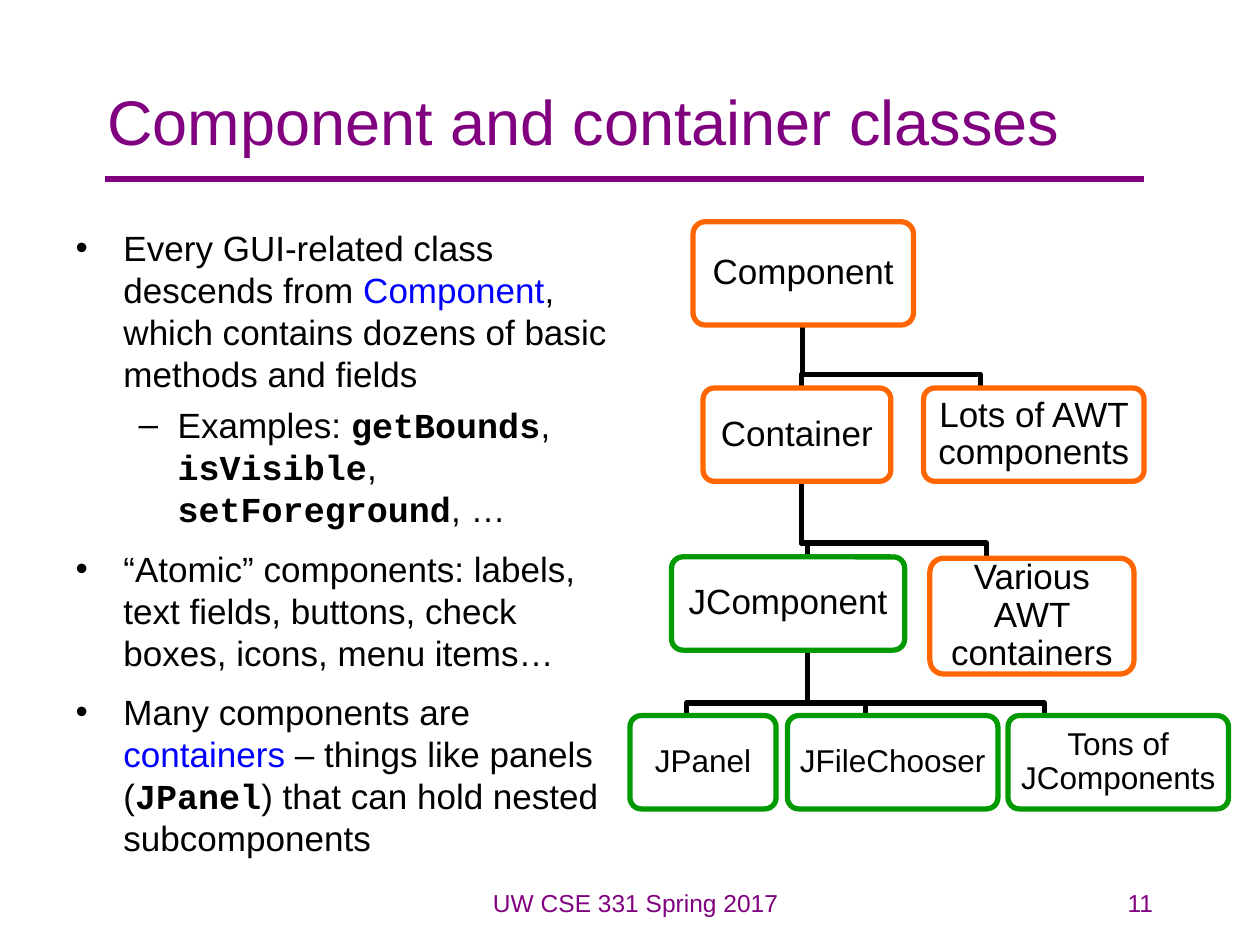
from lxml.etree import SubElement
from pptx import Presentation
from pptx.dml.color import RGBColor
from pptx.enum.shapes import MSO_CONNECTOR as Connector, MSO_SHAPE as Shape
from pptx.enum.text import MSO_ANCHOR as Anchor, MSO_AUTO_SIZE as AutoSize, PP_ALIGN as Align
from pptx.oxml.ns import qn
from pptx.util import Inches, Pt

PURPLE, BLACK, BLUE, WHITE = "800080", "000000", "0000FF", "FFFFFF"
ORANGE, GREEN = "FF6600", "009900"

PLAIN = dict(name="Arial", bold=False, color=BLACK)
TERM = dict(PLAIN, color=BLUE)
CODE = dict(PLAIN, name="Courier New", bold=True)

LEVEL_INDENTS = [(0.38, -0.38), (0.81, -0.31)]
POINTS = [
    (0, 0, [("Every GUI-related class descends from ", PLAIN), ("Component", TERM),
            (", which contains dozens of basic methods and fields", PLAIN)]),
    (1, 5, [("Examples: ", PLAIN), ("getBounds", CODE), (", ", PLAIN), ("isVisible", CODE),
            (", ", PLAIN), ("setForeground", CODE), (", …", PLAIN)]),
    (0, 10, [("“Atomic” components: labels, text fields, buttons, check boxes, "
              "icons, menu items…", PLAIN)]),
    (0, 10, [("Many components are ", PLAIN), ("containers", TERM),
             (" – things like panels (", PLAIN), ("JPanel", CODE),
             (") that can hold nested subcomponents", PLAIN)]),
]

BRANCHES = [
    (1.37, 0.82, 1.32, [2.78, 1.36]),
    (1.36, 2.06, 2.66, [2.83, 1.41]),
    (1.41, 3.41, 3.93, [3.29, 1.87, 0.45]),
]
CLASSES = [
    ("Component", 0.5, 0, 1.75, 0.82, ORANGE, 20),
    ("Container", 0.58, 1.32, 1.49, 0.74, ORANGE, 20),
    ("Lots of AWT components", 2.33, 1.32, 1.75, 0.74, ORANGE, 20),
    ("JComponent", 0.33, 2.66, 1.85, 0.74, GREEN, 20),
    ("Various AWT containers", 2.38, 2.67, 1.62, 0.92, ORANGE, 20),
    ("JPanel", 0, 3.92, 1.16, 0.74, GREEN, 18),
    ("JFileChooser", 1.25, 3.92, 1.67, 0.74, GREEN, 18),
    ("Tons of JComponents", 3, 3.92, 1.75, 0.74, GREEN, 18),
]


def rgb(color):
    """Turn a hex string into a colour."""
    return RGBColor.from_string(color)


def apply(target, **values):
    """Set each named attribute on the target."""
    for name, value in values.items():
        setattr(target, name, value)


def place(shape, box):
    """Move a shape to a box of left, top, width and height in inches."""
    left, top, width, height = map(Inches, box)
    apply(shape, left=left, top=top, width=width, height=height)


def write(paragraph, text, size, color=BLACK, **style):
    """Append a formatted run to a paragraph."""
    run = paragraph.add_run()
    run.text = text
    apply(run.font, size=Pt(size), **{"name": "Arial", **style})
    run.font.color.rgb = rgb(color)


def outline(shape, color):
    """Give a shape a 3-point line and no shadow."""
    shape.shadow.inherit = False
    shape.line.width = Pt(3)
    shape.line.color.rgb = rgb(color)


def add_heading(slide, box):
    """Fill the title and draw the rule beneath it."""
    title = slide.shapes.title
    place(title, box)
    apply(title.text_frame, vertical_anchor=Anchor.MIDDLE, auto_size=AutoSize.NONE)
    heading = title.text_frame.paragraphs[0]
    heading.alignment = Align.LEFT
    write(heading, "Component and container classes", 36, PURPLE)

    left, top, width, _ = box
    rule_y = Inches(top + 1.09)
    rule = slide.shapes.add_connector(
        Connector.STRAIGHT, Inches(left + 0.08), rule_y, Inches(left + width - 0.17), rule_y)
    rule.line.width = Pt(3)
    rule.line.color.rgb = rgb(PURPLE)
    SubElement(rule._element.spPr, qn("a:effectLst"))


def add_points(slide, box):
    """Fill the body placeholder with the bulleted points."""
    body = slide.placeholders[1]
    place(body, box)
    frame = body.text_frame
    frame.auto_size = AutoSize.NONE
    for index, (level, gap, pieces) in enumerate(POINTS):
        point = frame.add_paragraph() if index else frame.paragraphs[0]
        apply(point, level=level, space_before=Pt(gap))
        margin, indent = LEVEL_INDENTS[level]
        properties = point._p.get_or_add_pPr()
        properties.set("marL", str(Inches(margin)))
        properties.set("indent", str(Inches(indent)))
        for text, style in pieces:
            write(point, text, 20, **style)


def add_branch(slide, start, end):
    """Draw a stepped line that turns shortly above its end."""
    (start_x, start_y), (end_x, end_y) = start, end
    turn_y = end_y - Inches(0.11)
    builder = slide.shapes.build_freeform(start_x, start_y)
    builder.add_line_segments([(start_x, turn_y), (end_x, turn_y), end], close=False)
    branch = builder.convert_to_shape()
    branch.fill.background()
    outline(branch, BLACK)


def add_class(slide, box, name, color, size):
    """Draw one class as a rounded box with its name."""
    node = slide.shapes.add_shape(Shape.ROUNDED_RECTANGLE, *map(Inches, box))
    node.adjustments[0] = 0.12
    node.fill.solid()
    node.fill.fore_color.rgb = rgb(WHITE)
    tint = node._element.spPr.find(qn("a:solidFill"))[0]
    SubElement(tint, qn("a:alpha"), val="90000")
    outline(node, color)
    inset = Inches(0.04)
    apply(node.text_frame, word_wrap=True, vertical_anchor=Anchor.MIDDLE, margin_left=inset,
          margin_right=inset, margin_top=inset, margin_bottom=inset)
    label = node.text_frame.paragraphs[0]
    apply(label, alignment=Align.CENTER, line_spacing=0.9)
    write(label, name, size)


def add_class_tree(slide, box):
    """Draw the class hierarchy from the top left of its box."""
    left, top = box[:2]
    for stem_x, stem_y, child_y, child_xs in BRANCHES:
        for child_x in child_xs:
            add_branch(slide, (Inches(left + stem_x), Inches(top + stem_y)),
                       (Inches(left + child_x), Inches(top + child_y)))
    for name, x, y, width, height, color, size in CLASSES:
        add_class(slide, (left + x, top + y, width, height), name, color, size)


def add_footer(slide, box, text, alignment):
    """Write one footer entry."""
    footer = slide.shapes.add_textbox(*map(Inches, box))
    footer.text_frame.word_wrap = True
    entry = footer.text_frame.paragraphs[0]
    entry.alignment = alignment
    write(entry, text, 14, PURPLE)


def main():
    """Build the slide and save it."""
    deck = Presentation()
    apply(deck, slide_width=Inches(10), slide_height=Inches(7.5))
    slide = deck.slides.add_slide(deck.slide_layouts[1])
    add_heading(slide, (0.75, 0.33, 8.5, 1.25))
    add_points(slide, (0.5, 1.75, 4.58, 4.92))
    add_class_tree(slide, (5, 1.76, 4.75, 4.66))
    add_footer(slide, (3.17, 7, 3.75, 0.5), "UW CSE 331 Spring 2017", Align.CENTER)
    add_footer(slide, (7.17, 7, 2.08, 0.5), "11", Align.RIGHT)
    deck.save("out.pptx")


if __name__ == "__main__":
    main()
